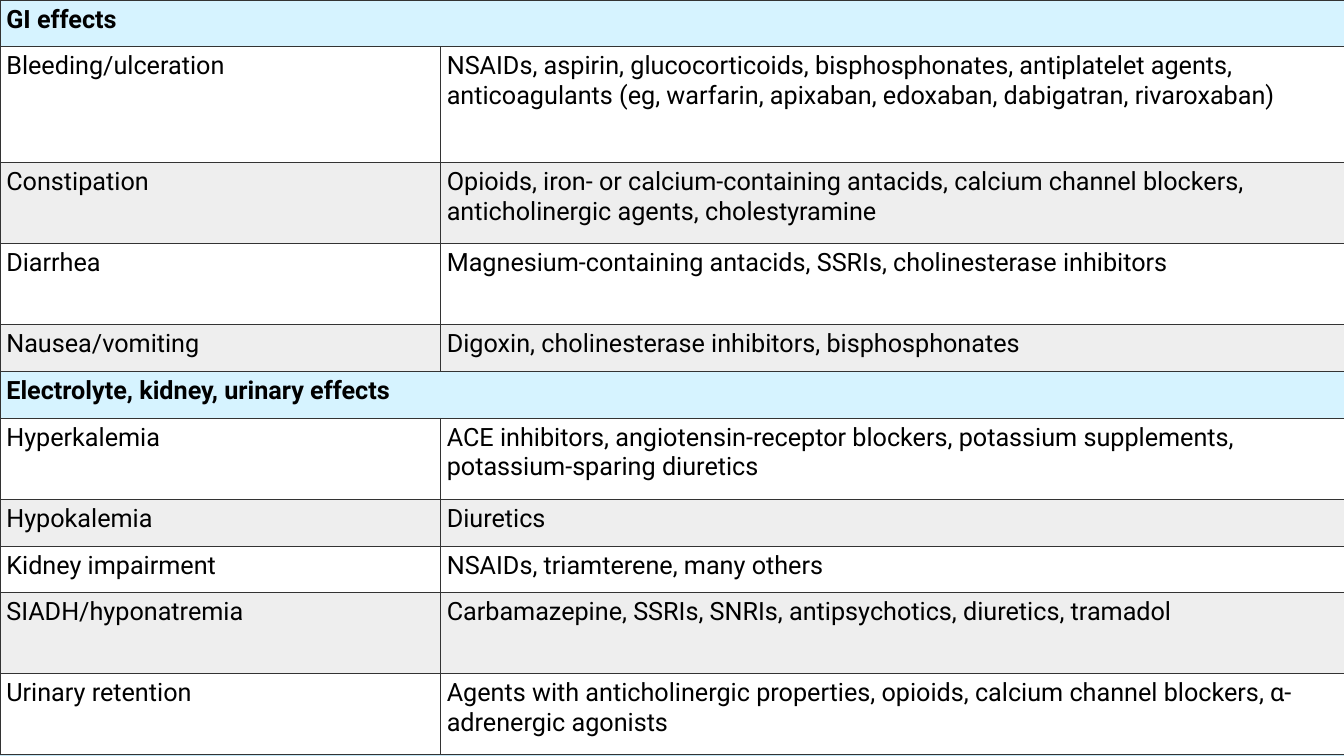
from lxml.etree import SubElement
from pptx import Presentation
from pptx.dml.color import RGBColor
from pptx.oxml.ns import qn
from pptx.util import Cm, Pt

BLACK = RGBColor(0x00, 0x00, 0x00)
WHITE = RGBColor(0xFF, 0xFF, 0xFF)
GREY = RGBColor(0xEE, 0xEE, 0xEE)
HEADING_BLUE = RGBColor(0xD6, 0xF3, 0xFF)
BACKGROUND = RGBColor(0xC1, 0xE5, 0xF5)
BORDER = RGBColor(0x33, 0x33, 0x33)

SHORT, MEDIUM, TALL = 1.18, 2.04, 2.92
COLUMNS = (11.1, 22.78)
SECTIONS = {
    "GI effects": [
        ("Bleeding/ulceration",
         "NSAIDs, aspirin, glucocorticoids, bisphosphonates, antiplatelet agents, "
         "anticoagulants (eg, warfarin, apixaban, edoxaban, dabigatran, rivaroxaban)", TALL),
        ("Constipation",
         "Opioids, iron- or calcium-containing antacids, calcium channel blockers, "
         "anticholinergic agents, cholestyramine", MEDIUM),
        ("Diarrhea", "Magnesium-containing antacids, SSRIs, cholinesterase inhibitors", MEDIUM),
        ("Nausea/vomiting", "Digoxin, cholinesterase inhibitors, bisphosphonates", SHORT),
    ],
    "Electrolyte, kidney, urinary effects": [
        ("Hyperkalemia",
         "ACE inhibitors, angiotensin-receptor blockers, potassium supplements, "
         "potassium-sparing diuretics", MEDIUM),
        ("Hypokalemia", "Diuretics", SHORT),
        ("Kidney impairment", "NSAIDs, triamterene, many others", SHORT),
        ("SIADH/hyponatremia",
         "Carbamazepine, SSRIs, SNRIs, antipsychotics, diuretics, tramadol", MEDIUM),
        ("Urinary retention",
         "Agents with anticholinergic properties, opioids, calcium channel blockers, "
         "α-adrenergic agonists", MEDIUM),
    ],
}


class SlideBuilder:
    font = "Roboto"
    size = Pt(18)

    def __init__(self, prs):
        self.s = prs.slides.add_slide(prs.slide_layouts[6])

    def background(self, color):
        fill = self.s.background.fill
        fill.solid()
        fill.fore_color.rgb = color

    def borders(self, cell):
        tcPr = cell._tc.get_or_add_tcPr()
        for side in ("a:lnL", "a:lnR", "a:lnT", "a:lnB"):
            ln = SubElement(tcPr, qn(side), w=str(Pt(0.75)))
            SubElement(SubElement(ln, qn("a:solidFill")), qn("a:srgbClr"), val=str(BORDER))

    def cell(self, cell, text, color, bold):
        cell.margin_left = Cm(0.16)
        cell.margin_right = cell.margin_top = cell.margin_bottom = Cm(0.12)
        self.borders(cell)
        cell.fill.solid()
        cell.fill.fore_color.rgb = color
        p = cell.text_frame.paragraphs[0]
        p.text = text
        p.font.name = self.font
        p.font.size = self.size
        p.font.bold = bold
        p.font.color.rgb = BLACK

    def table(self, sections):
        rows = []
        for heading, effects in sections.items():
            rows.append((heading, "", SHORT, HEADING_BLUE))
            for i, effect in enumerate(effects):
                rows.append((*effect, GREY if i % 2 else WHITE))
        height = sum(row[2] for row in rows)
        table = self.s.shapes.add_table(
            len(rows), len(COLUMNS), Cm(0), Cm(0), Cm(sum(COLUMNS)), Cm(height)).table
        for column, width in zip(table.columns, COLUMNS):
            column.width = Cm(width)
        for r, (effect, drugs, height, color) in enumerate(rows):
            table.rows[r].height = Cm(height)
            is_heading = color == HEADING_BLUE
            for c, text in enumerate((effect, drugs)):
                self.cell(table.cell(r, c), text, color, is_heading)
            if is_heading:
                table.cell(r, 0).merge(table.cell(r, 1))


def main():
    prs = Presentation()
    prs.slide_width, prs.slide_height = Cm(33.87), Cm(19.05)
    slide = SlideBuilder(prs)
    slide.background(BACKGROUND)
    slide.table(SECTIONS)
    prs.save("out.pptx")


if __name__ == "__main__":
    main()
